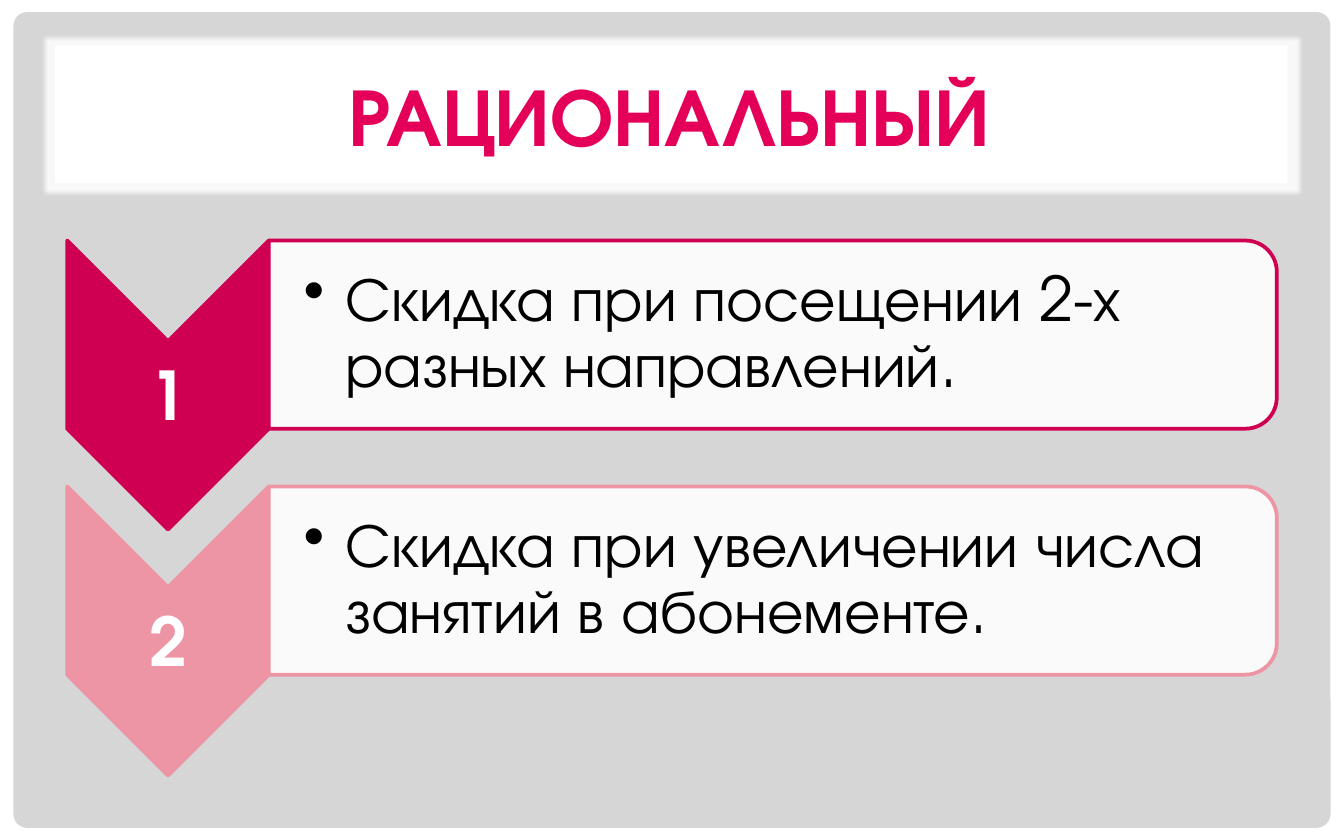
from dataclasses import dataclass

from lxml import etree
from pptx import Presentation, util as u
from pptx.dml.color import RGBColor
from pptx.enum import shapes, text
from pptx.oxml.ns import qn


@dataclass(frozen=True)
class Theme:
    font: str = "TeX Gyre Adventor"
    white: str = "FFFFFF"
    grey: str = "D6D6D6"
    ink: str = "000000"
    title: str = "E40059"
    steps: tuple = ("CF0051", "ED95A4")
    title_size: int = 44
    number_size: int = 36
    body_size: int = 33


T = Theme()
WIDTH, HEIGHT = 10, 6.25
LEFT, NUMBER_W, BODY_W = 0.5, 1.5, 7.5   # two columns
TOP, PITCH, BODY_H, CHEVRON_H = 1.79, 1.83, 1.4, 2.15
ROWS = (
    "Скидка при посещении 2-х разных направлений.",
    "Скидка при увеличении числа занятий в абонементе.",
)


def rgb(color):
    return RGBColor.from_string(color)


def add_block(s, kind, box, fill, line=None, alpha=None, adj=None, turned=False):
    """Add a preset shape; box is where it shows, also when turned by 90 degrees."""
    x, y, w, h = box
    if turned:
        x, y, w, h = x + (w - h) / 2, y + (h - w) / 2, h, w
    sp = s.shapes.add_shape(kind, *map(u.Inches, (x, y, w, h)))
    sp.rotation = 90 if turned else 0
    sp.shadow.inherit = False
    sp.fill.solid()
    sp.fill.fore_color.rgb = rgb(fill)
    if alpha:
        clr = sp.element.spPr.find(qn("a:solidFill"))[0]
        etree.SubElement(clr, qn("a:alpha"), val=str(alpha * 1000))
    if line:
        sp.line.color.rgb = rgb(line)
        sp.line.width = u.Pt(2)
    else:
        sp.line.fill.background()
    if adj is not None:
        sp.adjustments[0] = adj
    return sp


def soften(sp, radius):
    effects = sp.element.spPr.find(qn("a:effectLst"))
    etree.SubElement(effects, qn("a:softEdge"), rad=str(u.Inches(radius)))


def write(sp, words, size, color, bold=False, align=text.PP_ALIGN.LEFT,
          spacing=1.0, insets=(0.1, 0.05, 0.1, 0.05)):
    tf = sp.text_frame
    tf.word_wrap = True
    tf.auto_size = text.MSO_AUTO_SIZE.NONE
    tf.vertical_anchor = text.MSO_ANCHOR.MIDDLE
    tf.margin_left, tf.margin_top, tf.margin_right, tf.margin_bottom = map(u.Inches, insets)
    p = tf.paragraphs[0]
    p.alignment, p.line_spacing = align, spacing
    r = p.add_run()
    r.text = words
    r.font.name, r.font.size, r.font.bold = T.font, u.Pt(size), bold
    r.font.color.rgb = rgb(color)
    return p


def add_bullet(p, indent):
    pPr = p._p.get_or_add_pPr()
    pPr.set("marL", str(u.Inches(indent)))
    pPr.set("indent", str(-u.Inches(indent)))
    etree.SubElement(pPr, qn("a:buChar"), char="•")


def add_text_box(s, box):
    return s.shapes.add_textbox(*map(u.Inches, box))


def add_backdrop(s):
    kind = shapes.MSO_SHAPE
    s.background.fill.solid()
    s.background.fill.fore_color.rgb = rgb(T.grey)
    add_block(s, kind.RECTANGLE, (0, 0, WIDTH, HEIGHT), T.white)
    add_block(s, kind.ROUNDED_RECTANGLE, (0.1, 0.09, 9.8, 6.07), T.grey, adj=0.017)
    frame = add_block(s, kind.RECTANGLE, (0.3, 0.25, 9.4, 1.21), T.white, alpha=83)
    soften(frame, 0.03)
    add_block(s, kind.RECTANGLE, (0.41, 0.34, 9.17, 1.02), T.white)


def add_title(s, words):
    sp = s.shapes.title
    sp.left, sp.top, sp.width, sp.height = map(u.Inches, (0.47, 0.37, 9.03, 0.95))
    write(sp, words, T.title_size, T.title, bold=True, align=text.PP_ALIGN.CENTER)
    sp.element.getparent().append(sp.element)  # in front of the panels


def add_step(s, i, words, color):
    y = TOP + i * PITCH
    body_x = LEFT + NUMBER_W

    # Numbered arrow
    add_block(s, shapes.MSO_SHAPE.CHEVRON, (LEFT, y, NUMBER_W, CHEVRON_H),
              color, line=color, adj=0.5, turned=True)
    number = add_text_box(s, (LEFT, y + NUMBER_W / 2, NUMBER_W, 0.64))
    write(number, str(i + 1), T.number_size, T.white, bold=True,
          align=text.PP_ALIGN.CENTER, spacing=0.9, insets=(0, 0.22, 0, 0))

    # Description
    add_block(s, shapes.MSO_SHAPE.ROUND_2_SAME_RECTANGLE, (body_x, y, BODY_W, BODY_H),
              T.white, line=color, alpha=90, turned=True)
    body = add_text_box(s, (body_x, y + 0.07, BODY_W - 0.07, BODY_H - 0.14))
    p = write(body, words, T.body_size, T.ink, spacing=0.9,
              insets=(0.26, 0.02, 0.02, 0.02))
    add_bullet(p, 0.31)


def main():
    prs = Presentation()
    prs.slide_width, prs.slide_height = u.Inches(WIDTH), u.Inches(HEIGHT)
    s = prs.slides.add_slide(prs.slide_layouts[5])
    add_backdrop(s)
    add_title(s, "РАЦИОНАЛЬНЫЙ")
    for i, (words, color) in enumerate(zip(ROWS, T.steps)):
        add_step(s, i, words, color)
    prs.save("out.pptx")


if __name__ == "__main__":
    main()
